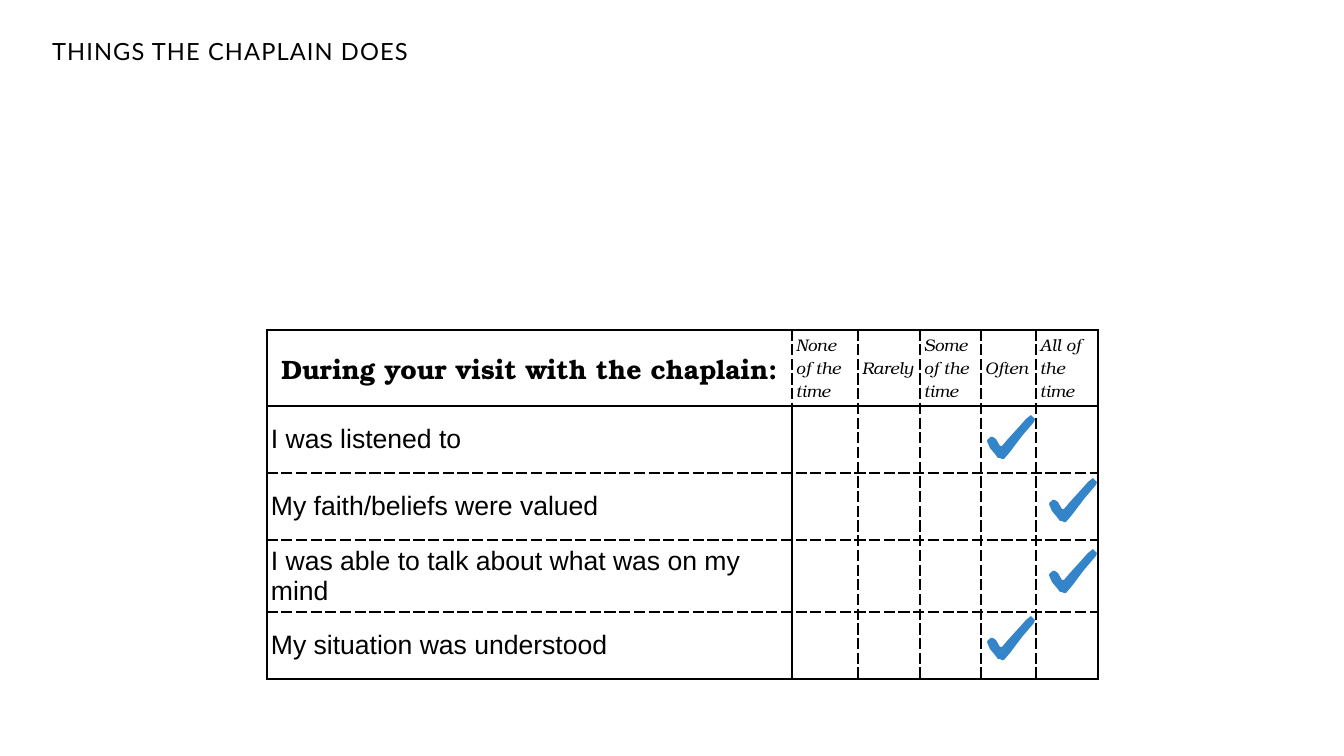
from lxml import etree
from pptx import Presentation
from pptx.dml.color import RGBColor
from pptx.enum.text import MSO_ANCHOR, MSO_AUTO_SIZE, PP_ALIGN
from pptx.oxml.ns import qn
from pptx.util import Pt

LEFT, CENTER = PP_ALIGN.LEFT, PP_ALIGN.CENTER
MIDDLE, BOTTOM = MSO_ANCHOR.MIDDLE, MSO_ANCHOR.BOTTOM
NO_AUTOFIT = MSO_AUTO_SIZE.NONE

BLACK = RGBColor(0x00, 0x00, 0x00)
CHECK_BLUE = RGBColor(0x34, 0x84, 0xC9)
SANS, SERIF, HEADING = "Arial", "TeX Gyre Bonum", "Lato"
SOLID, DASHED = "solid", "lgDash"
EMU_PER_PX = 914400 / 100.8

QUESTION = "During your visit with the chaplain:"
ANSWERS = ["None of the time", "Rarely", "Some of the time", "Often", "All of the time"]
STATEMENTS = [
    "I was listened to",
    "My faith/beliefs were valued",
    "I was able to talk about what was on my mind",
    "My situation was understood",
]
COLUMN_WIDTHS = [525, 66, 62, 61, 55, 62]
ROW_HEIGHTS = [76, 67, 67, 72, 67]
CELL_INSET = 4

# Offsets from the top left of the survey
OFTEN, ALWAYS = 720, 782
CHECKS = [(OFTEN, 84), (ALWAYS, 147), (ALWAYS, 218), (OFTEN, 285)]
CHECK_OUTLINE = [
    (44, 1), (39, 5), (31, 14), (21, 25), (15, 32), (13, 32), (9, 25), (6, 23),
    (3, 23), (3, 24), (1, 25), (0, 27), (3, 34), (8, 40), (11, 44), (13, 44),
    (15, 45), (17, 45), (23, 38), (35, 22), (47, 8), (48, 5), (47, 4), (45, 2),
]


def px(length):
    return round(length * EMU_PER_PX)


def write(frame, text, font, size, bold=False, italic=False, align=LEFT,
          line_spacing=None, tracking=None):
    paragraph = frame.paragraphs[0]
    paragraph.alignment = align
    if line_spacing:
        paragraph.line_spacing = line_spacing
    run = paragraph.add_run()
    run.text = text
    run.font.name = font
    run.font.size = Pt(size)
    run.font.bold = bold
    run.font.italic = italic
    run.font.color.rgb = BLACK
    if tracking:
        run._r.get_or_add_rPr().set("spc", str(tracking))


def add_heading(slide, left, top, width, height):
    heading = slide.shapes.title
    heading.left, heading.top = px(left), px(top)
    heading.width, heading.height = px(width), px(height)
    frame = heading.text_frame
    frame.auto_size = NO_AUTOFIT
    frame.word_wrap = True
    frame.vertical_anchor = BOTTOM
    write(frame, "THINGS THE CHAPLAIN DOES", HEADING, 16.9,
          line_spacing=0.8, tracking=80)


def set_borders(cell, dashes):
    """Draw the sides in the order left, right, top, bottom."""
    properties = cell._tc.get_or_add_tcPr()
    for side, dash in zip(("lnL", "lnR", "lnT", "lnB"), dashes):
        line = etree.SubElement(properties, qn(f"a:{side}"), w=str(Pt(1)))
        fill = etree.SubElement(line, qn("a:solidFill"))
        etree.SubElement(fill, qn("a:srgbClr"), val=str(BLACK))
        etree.SubElement(line, qn("a:prstDash"), val=dash)


def vertical_rule(row, boundary):
    outer = boundary in (0, len(COLUMN_WIDTHS))
    beside_statements = boundary == 1 and row > 0
    return SOLID if outer or beside_statements else DASHED


def horizontal_rule(boundary):
    return SOLID if boundary in (0, 1, len(ROW_HEIGHTS)) else DASHED


def add_survey(slide, left, top):
    table = slide.shapes.add_table(
        len(ROW_HEIGHTS), len(COLUMN_WIDTHS), px(left), px(top),
        px(sum(COLUMN_WIDTHS)), px(sum(ROW_HEIGHTS))).table
    table.first_row = table.horz_banding = False
    for column, width in zip(table.columns, COLUMN_WIDTHS):
        column.width = px(width)
    for row, height in zip(table.rows, ROW_HEIGHTS):
        row.height = px(height)

    for r in range(len(ROW_HEIGHTS)):
        for c in range(len(COLUMN_WIDTHS)):
            cell = table.cell(r, c)
            set_borders(cell, (vertical_rule(r, c), vertical_rule(r, c + 1),
                               horizontal_rule(r), horizontal_rule(r + 1)))
            cell.fill.background()
            cell.vertical_anchor = MIDDLE
            cell.margin_left = cell.margin_right = px(CELL_INSET)
            cell.margin_top = cell.margin_bottom = px(CELL_INSET)

    write(table.cell(0, 0).text_frame, QUESTION, SERIF, 19, bold=True, align=CENTER)
    for c, answer in enumerate(ANSWERS, 1):
        write(table.cell(0, c).text_frame, answer, SERIF, 12, italic=True)
    for r, statement in enumerate(STATEMENTS, 1):
        write(table.cell(r, 0).text_frame, statement, SANS, 19)

    for x, y in CHECKS:
        add_check(slide, left + x, top + y)


def add_check(slide, left, top):
    start, *rest = [(left + x, top + y) for x, y in CHECK_OUTLINE]
    builder = slide.shapes.build_freeform(*start, scale=EMU_PER_PX)
    builder.add_line_segments(rest, close=True)
    check = builder.convert_to_shape()
    check.shadow.inherit = False
    check.fill.solid()
    check.fill.fore_color.rgb = CHECK_BLUE
    check.line.fill.background()


def main():
    presentation = Presentation()
    presentation.slide_width, presentation.slide_height = px(1344), px(756)
    title_only = presentation.slide_layouts[5]
    slide = presentation.slides.add_slide(title_only)
    add_survey(slide, 267, 330)
    add_heading(slide, 42, 35, 1155, 35)
    presentation.save("out.pptx")


if __name__ == "__main__":
    main()
